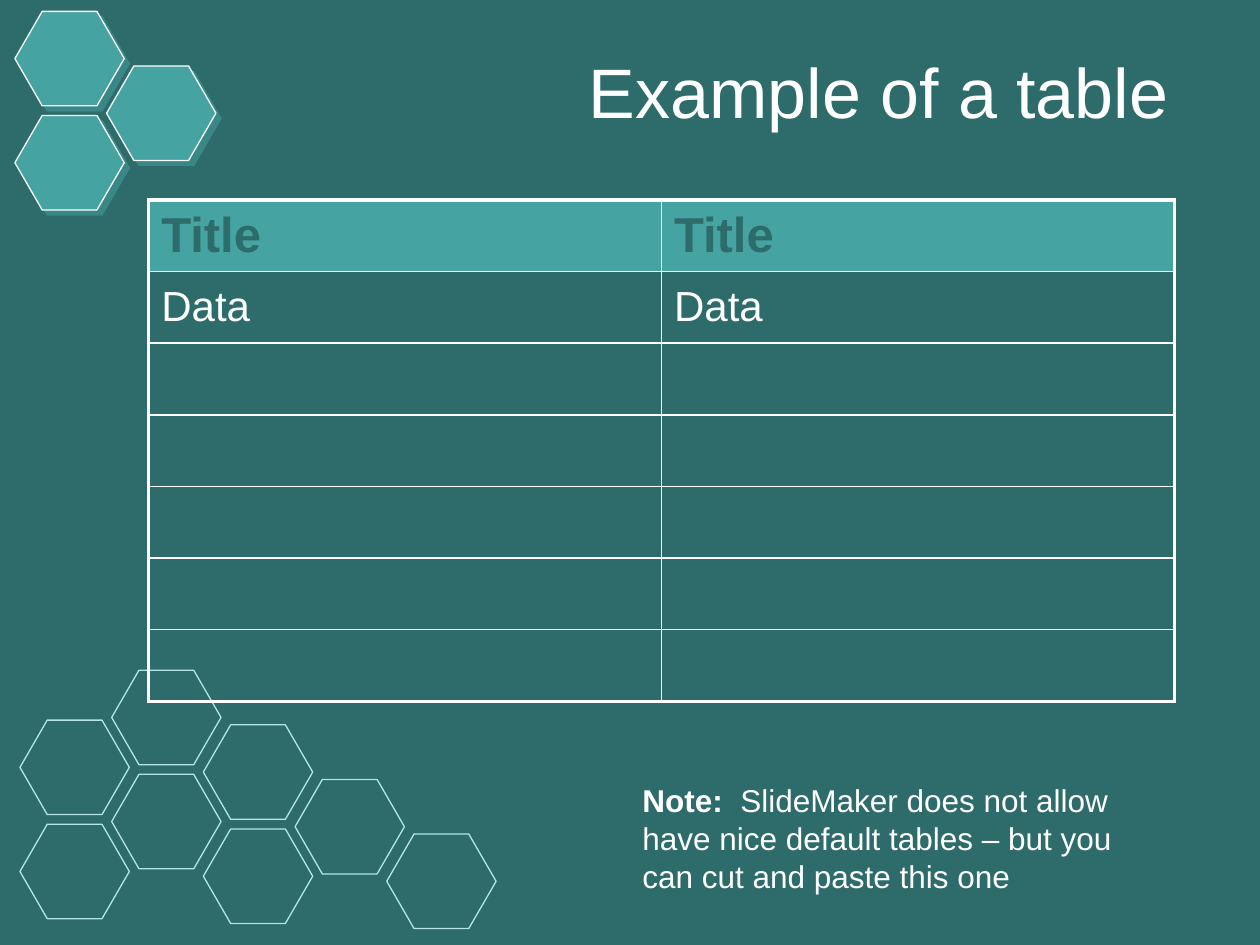
from lxml import etree
from pptx import Presentation
from pptx.dml.color import RGBColor
from pptx.enum.shapes import MSO_SHAPE
from pptx.enum.text import MSO_ANCHOR, PP_ALIGN
from pptx.oxml import parse_xml
from pptx.oxml.ns import nsdecls, qn
from pptx.util import Pt

HEXAGON = MSO_SHAPE.HEXAGON
MIDDLE, TOP = MSO_ANCHOR.MIDDLE, MSO_ANCHOR.TOP
LEFT, RIGHT = PP_ALIGN.LEFT, PP_ALIGN.RIGHT

DARK, TEAL, PALE, WHITE = "2E6B6B", "45A3A1", "B3E6E6", "FFFFFF"
HEX_W, HEX_H = 62.5, 54
COL_STEP, ROW_STEP = 52.4, 59.5


def paint(target, color):
    """Give a fill a solid colour."""
    target.solid()
    target.fore_color.rgb = RGBColor.from_string(color)


class Deck:
    """Holds the style and the current slide."""

    font = "Arial"

    def __init__(self, slide):
        self.slide = slide
        paint(slide.background.fill, DARK)

    def add_run(self, para, text, **style):
        run = para.add_run()
        run.text = text
        color = style.pop("color", WHITE)
        for name, value in {"name": self.font, **style}.items():
            setattr(run.font, name, value)
        paint(run.font.fill, color)

    def text(self, box, runs, size, align=LEFT, anchor=TOP):
        frame = self.slide.shapes.add_textbox(*map(Pt, box)).text_frame
        frame.word_wrap = True
        frame.vertical_anchor = anchor
        para = frame.paragraphs[0]
        para.alignment = align
        for words, bold in runs:
            self.add_run(para, words, size=Pt(size), bold=bold)

    def cell(self, left, top, line, fill=None):
        shape = self.slide.shapes.add_shape(
            HEXAGON, Pt(left), Pt(top), Pt(HEX_W), Pt(HEX_H))
        shape.adjustments[0] = 0.289
        shape.shadow.inherit = False
        paint(shape.line.fill, line)
        shape.line.width = Pt(0.75)
        if fill:
            paint(shape.fill, fill)
            self.shade(shape, fill)
        else:
            shape.fill.background()

    def shade(self, shape, color):
        """Drop a half-clear shadow down and to the right."""
        effects = shape._element.spPr.find(qn("a:effectLst"))
        effects.append(parse_xml(
            f'<a:outerShdw {nsdecls("a")} dist="{Pt(4.2)}" dir="2700000" '
            f'algn="ctr" rotWithShape="0"><a:srgbClr val="{color}">'
            '<a:alpha val="50000"/></a:srgbClr></a:outerShdw>'))

    def comb(self, left, cols, line, fill=None):
        """Draw columns of hexagons, each given as its top and count."""
        for i, (top, count) in enumerate(cols):
            for j in range(count):
                self.cell(left + i * COL_STEP, top + j * ROW_STEP, line, fill)

    def edge(self, cell, sides):
        """Set the cell borders from a dict of side to width."""
        props = cell._tc.get_or_add_tcPr()
        for i, (side, width) in enumerate(sides.items()):
            line = etree.Element(qn(f"a:ln{side}"), w=str(Pt(width)))
            solid = etree.SubElement(line, qn("a:solidFill"))
            etree.SubElement(solid, qn("a:srgbClr"), val=WHITE)
            props.insert(i, line)

    def table(self, box, data, thick=2.25, thin=1):
        rows, cols = len(data), len(data[0])
        grid = self.slide.shapes.add_table(rows, cols, *map(Pt, box)).table
        grid.first_row = grid.horz_banding = False
        for r, row in enumerate(data):
            for c, words in enumerate(row):
                cell = grid.cell(r, c)
                cell.vertical_anchor = MIDDLE
                if r == 0:
                    paint(cell.fill, TEAL)
                    style = {"size": Pt(28), "bold": True, "color": DARK}
                else:
                    cell.fill.background()
                    style = {"size": Pt(24), "bold": False}
                if words:
                    self.add_run(cell.text_frame.paragraphs[0], words, **style)
                outer = {"L": c == 0, "R": c == cols - 1,
                         "T": r == 0, "B": r == rows - 1}
                self.edge(cell, {side: thick if out else thin
                                 for side, out in outer.items()})


def main():
    show = Presentation()
    show.slide_width, show.slide_height = Pt(720), Pt(540)
    deck = Deck(show.slides.add_slide(show.slide_layouts[6]))

    deck.comb(11.4, [(411.5, 2), (383, 2), (414.2, 2), (445.4, 1), (476.6, 1)],
              PALE)
    deck.comb(8.5, [(6.5, 2), (37.7, 1)], WHITE, TEAL)
    deck.text((133, 20, 541.5, 63), [("Example of a table", False)], 40,
              RIGHT, MIDDLE)
    deck.table((85, 114.2, 586, 286.6),
               [["Title"] * 2, ["Data"] * 2] + [[""] * 2] * 5)
    deck.text((360, 443, 303, 72),
              [("Note:  ", True),
               ("SlideMaker does not allow have nice default tables – "
                "but you can cut and paste this one", False)], 18)

    show.save("out.pptx")


if __name__ == "__main__":
    main()
